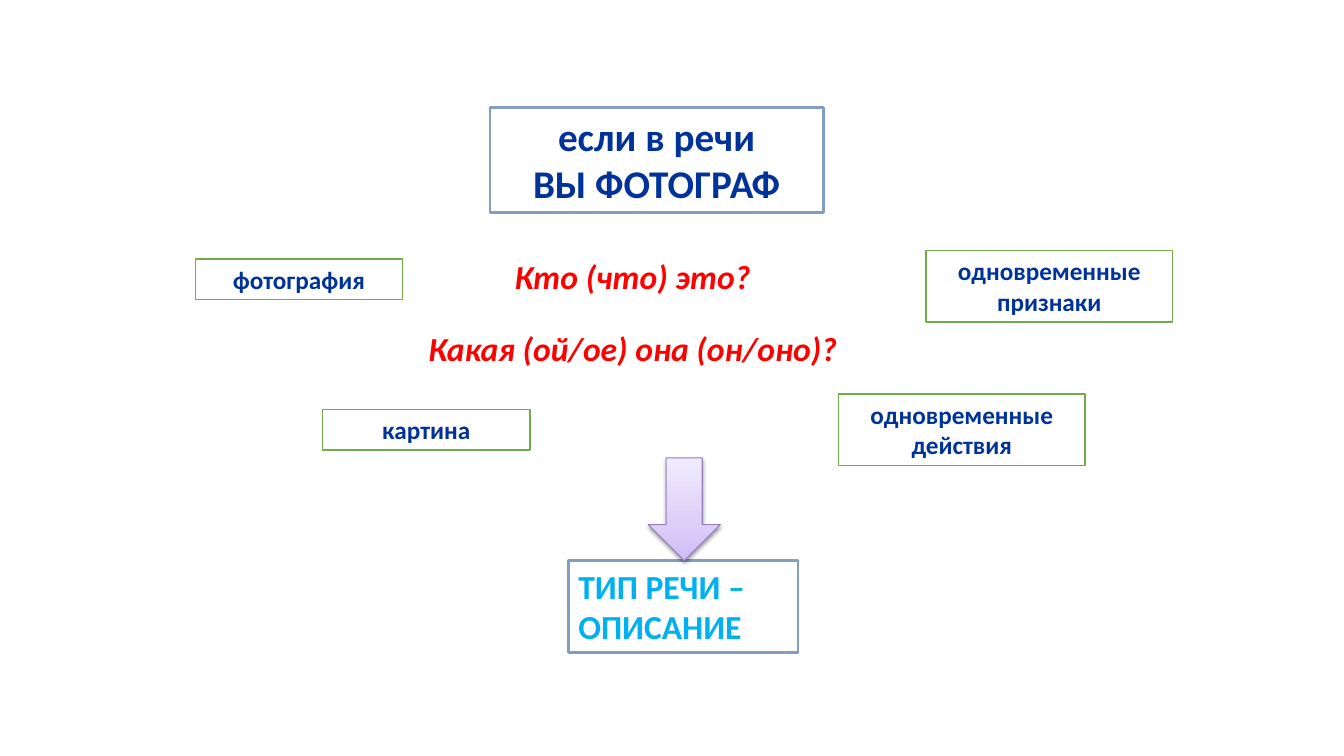
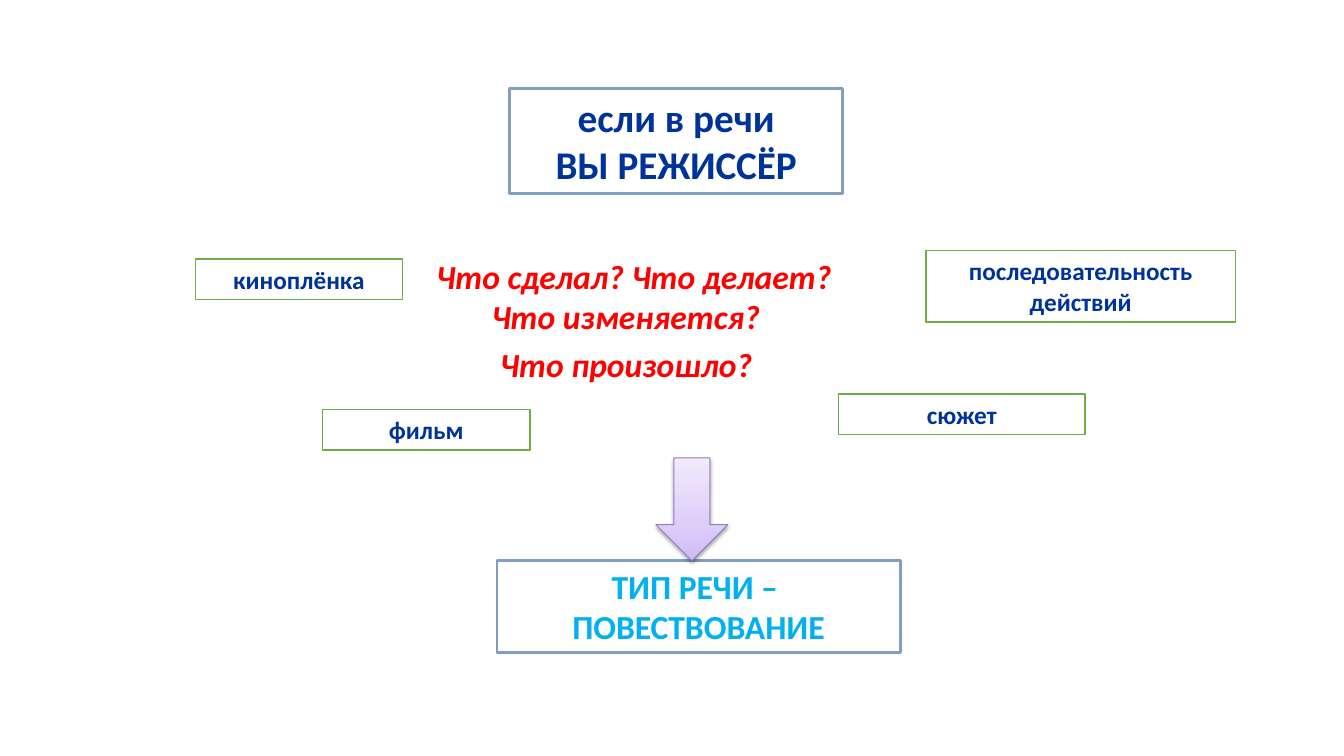
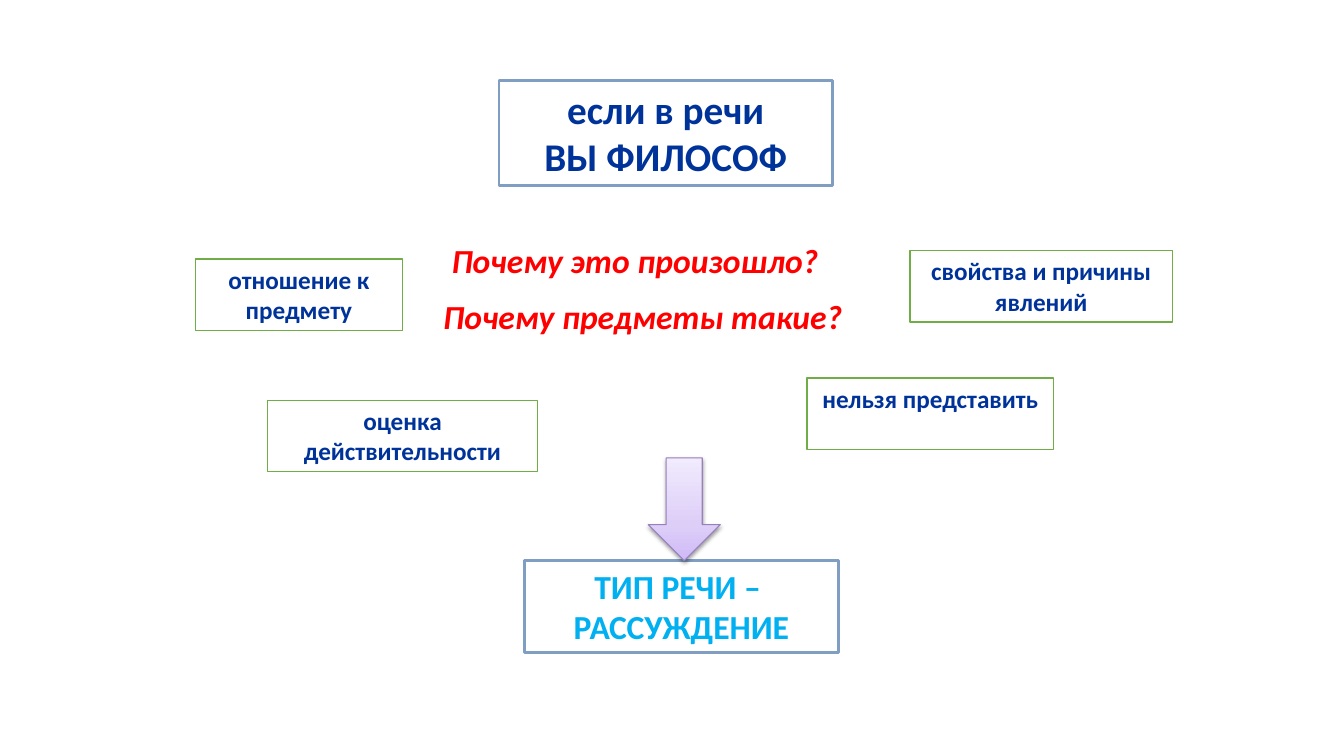
from lxml import etree
from pptx import Presentation
from pptx.dml.color import RGBColor
from pptx.enum import shapes, text
from pptx.oxml import ns
from pptx.util import Pt

FONT = "Calibri"
WHITE = RGBColor(0xFF, 0xFF, 0xFF)
NAVY = RGBColor(0x00, 0x33, 0x99)
RED = RGBColor(0xFF, 0x00, 0x00)
SKY = RGBColor(0x00, 0xB0, 0xF0)
STEEL = RGBColor(0x80, 0x9E, 0xC2)
GREEN = RGBColor(0x70, 0xAD, 0x47)
PURPLE = RGBColor(0x98, 0x80, 0xBD)
ARROW_STOPS = [(0, RGBColor(0xCF, 0xBA, 0xF7)),
               (35, RGBColor(0xDD, 0xCE, 0xF8)),
               (100, RGBColor(0xF1, 0xEB, 0xFD))]

LEFT, CENTER = text.PP_ALIGN.LEFT, text.PP_ALIGN.CENTER
ONE_LINE, TWO_LINES = 29, 51  # label heights

# Text and places: role (x, y, name), questions (x, y, w, text),
# labels (x, y, w, h, text), type of speech (x, w, align, name)
SLIDES = [
    {"role": (350, 77, "ВЫ ФОТОГРАФ"),
     "questions": [(360.5, 179, 210, "Кто (что) это?"),
                   (299, 230.5, 338, "Какая (ой/ое) она (он/оно)?")],
     "labels": [(139.5, 185, 148, ONE_LINE, "фотография"),
                (230.5, 292.5, 148, ONE_LINE, "картина"),
                (661.5, 179, 176, TWO_LINES, "одновременные признаки"),
                (599, 281.5, 176, TWO_LINES, "одновременные действия")],
     "arrow_x": 463,
     "type": (406, 164, LEFT, "ОПИСАНИЕ")},
    {"role": (364, 63, "ВЫ РЕЖИССЁР"),
     "questions": [(304.5, 179, 349, "Что сделал? Что делает?"),
                   (344, 207.5, 278, "Что изменяется?"),
                   (350, 242, 278, "Что произошло?")],
     "labels": [(139.5, 185, 148, ONE_LINE, "киноплёнка"),
                (230.5, 292.5, 148, ONE_LINE, "фильм"),
                (661.5, 179, 221, TWO_LINES, "последовательность действий"),
                (599, 281.5, 176, ONE_LINE, "сюжет")],
     "arrow_x": 468.5,
     "type": (355, 288, CENTER, "ПОВЕСТВОВАНИЕ")},
    {"role": (356.5, 57.5, "ВЫ ФИЛОСОФ"),
     "questions": [(315.5, 168, 319, "Почему это произошло?"),
                   (309.5, 207.5, 341, "Почему предметы такие?")],
     "labels": [(139.5, 185, 148, TWO_LINES, "отношение к предмету"),
                (191, 286, 193, TWO_LINES, "оценка действительности"),
                (650, 179, 187.5, TWO_LINES, "свойства и причины явлений"),
                (576.5, 270, 176, TWO_LINES, "нельзя представить")],
     "arrow_x": 463,
     "type": (374.5, 224.5, CENTER, "РАССУЖДЕНИЕ")},
]


def write(sp, lines, size, color, align=CENTER, italic=False):
    """Fill a shape with bold paragraphs from the top down."""
    tf = sp.text_frame
    tf.word_wrap = True
    tf.vertical_anchor = text.MSO_ANCHOR.TOP
    tf.text = "\n".join(lines)
    for p in tf.paragraphs:
        p.alignment = align
        for r in p.runs:
            r.font.name, r.font.size = FONT, Pt(size)
            r.font.bold, r.font.italic = True, italic
            r.font.color.rgb = color


def add_question(s, x, y, w, question):
    sp = s.shapes.add_textbox(Pt(x), Pt(y), Pt(w), Pt(36.5))
    write(sp, [question], 24, RED, LEFT, italic=True)


def add_frame(s, x, y, w, h, line, width):
    """White rectangle with a coloured outline."""
    sp = s.shapes.add_shape(shapes.MSO_SHAPE.RECTANGLE, Pt(x), Pt(y), Pt(w), Pt(h))
    sp.shadow.inherit = False
    sp.fill.solid()
    sp.fill.fore_color.rgb = WHITE
    sp.line.color.rgb = line
    sp.line.width = Pt(width)
    return sp


def add_color(parent, rgb):
    return etree.SubElement(parent, ns.qn("a:srgbClr"), val=str(rgb))


def add_arrow(s, x):
    sp = s.shapes.add_shape(shapes.MSO_SHAPE.DOWN_ARROW, Pt(x), Pt(327), Pt(51.5), Pt(73.5))
    sp.line.color.rgb = PURPLE
    sp.line.width = Pt(0.75)
    # Three-stop gradient, darkest at the tip
    sp.fill.gradient()
    sp.fill.gradient_angle = 90
    stops = sp.element.spPr.find(".//" + ns.qn("a:gsLst"))
    for gs in list(stops):
        stops.remove(gs)
    for pos, rgb in ARROW_STOPS:
        add_color(etree.SubElement(stops, ns.qn("a:gs"), pos=str(pos * 1000)), rgb)
    # Soft shadow below
    sp.shadow.inherit = False
    effects = sp.element.spPr.find(ns.qn("a:effectLst"))
    shadow = etree.SubElement(effects, ns.qn("a:outerShdw"), blurRad=str(Pt(3.1)),
                              dist=str(Pt(1.6)), dir="5400000", rotWithShape="0")
    black = add_color(shadow, RGBColor(0, 0, 0))
    etree.SubElement(black, ns.qn("a:alpha"), val="38000")


def build_slide(prs, content):
    s = prs.slides.add_slide(prs.slide_layouts[6])
    for question in content["questions"]:
        add_question(s, *question)
    # Role in speech
    x, y, role = content["role"]
    write(add_frame(s, x, y, 238, 75, STEEL, 2), ["если в речи", role], 28, NAVY)
    # Type of speech
    x, w, align, name = content["type"]
    write(add_frame(s, x, 400.5, w, 65.5, STEEL, 2), ["ТИП РЕЧИ – ", name], 24, SKY, align)
    # Features
    for x, y, w, h, label in content["labels"]:
        write(add_frame(s, x, y, w, h, GREEN, 1), [label], 18, NAVY)
    add_arrow(s, content["arrow_x"])


def main():
    prs = Presentation()
    prs.slide_width, prs.slide_height = Pt(960), Pt(540)
    for content in SLIDES:
        build_slide(prs, content)
    prs.save("out.pptx")


if __name__ == "__main__":
    main()
